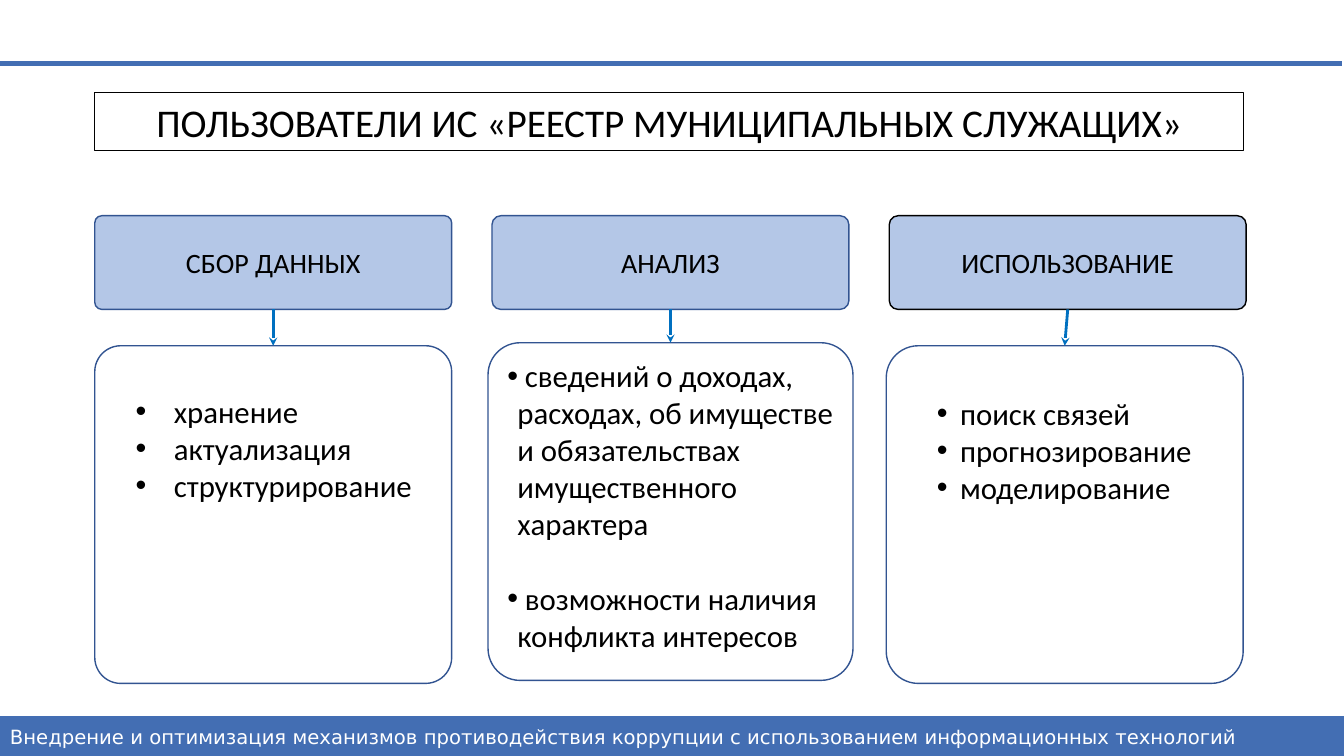
from lxml import etree
from pptx import Presentation
from pptx import util as u
from pptx.dml.color import RGBColor
from pptx.enum import shapes, text
from pptx.oxml import ns

BLUE, OUTLINE, BLACK, WHITE = "436EB3", "325491", "000000", "FFFFFF"


def rgb(value):
    return RGBColor.from_string(value)


def style(shape, fill, line, width, size, color=BLACK, font="Calibri",
          align=text.PP_ALIGN.CENTER, anchor=text.MSO_ANCHOR.MIDDLE):
    """Fill and outline a shape and format all of its paragraphs."""
    shape.fill.solid()
    shape.fill.fore_color.rgb = rgb(fill)
    shape.line.color.rgb = rgb(line)
    shape.line.width = u.Pt(width)
    frame = shape.text_frame
    frame.word_wrap = True
    frame.auto_size = text.MSO_AUTO_SIZE.NONE
    frame.vertical_anchor = anchor
    for paragraph in frame.paragraphs:
        paragraph.alignment = align
        paragraph.font.size = u.Pt(size)
        paragraph.font.name = font
        paragraph.font.color.rgb = rgb(color)


presentation = Presentation()
presentation.slide_width, presentation.slide_height = u.Inches(13.33), u.Inches(7.5)
slide = presentation.slides.add_slide(presentation.slide_layouts[5])

# Title
title = slide.shapes.title
title.left, title.top = u.Inches(0.94), u.Inches(0.92)
title.width, title.height = u.Inches(11.39), u.Inches(0.57)
title.text_frame.text = "ПОЛЬЗОВАТЕЛИ ИС «РЕЕСТР МУНИЦИПАЛЬНЫХ СЛУЖАЩИХ»"
style(title, WHITE, BLACK, 0.75, 28)

# Top rule
rule = slide.shapes.add_connector(shapes.MSO_CONNECTOR.STRAIGHT, 0, u.Inches(0.63),
                                  u.Inches(13.31), u.Inches(0.63))
rule.line.color.rgb = rgb(BLUE)
rule.line.width = u.Pt(3)
connectors = [rule]

# Columns: heading, heading outline, corner, card (left, top, width),
# text inset (left, top), hanging indent, list items
columns = [
    ("СБОР ДАННЫХ", OUTLINE, 0.077, (0.94, 3.43, 3.54), (0.33, 0.39), 0.38,
     ["хранение", "актуализация", "структурирование"]),
    ("АНАЛИЗ", OUTLINE, 0.095, (4.84, 3.4, 3.62), (0.1, 0.05), 0.1,
     [" сведений о доходах, расходах, об имуществе и обязательствах "
      "имущественного характера",
      " возможности наличия конфликта интересов"]),
    ("ИСПОЛЬЗОВАНИЕ", BLACK, 0.095, (8.79, 3.43, 3.54), (0.41, 0.39), 0.23,
     ["поиск связей", "прогнозирование", "моделирование"]),
]
for index, (heading, outline, corner, place, inset, indent, items) in enumerate(columns):
    # Heading
    header = slide.shapes.add_shape(
        shapes.MSO_SHAPE.ROUNDED_RECTANGLE, u.Inches(0.94 + 3.94 * index),
        u.Inches(2.14), u.Inches(3.54), u.Inches(0.93))
    header.text_frame.text = heading
    style(header, "B4C7E7", outline, 1, 20)

    # Card with bulleted list
    left, top, width = place
    card = slide.shapes.add_shape(
        shapes.MSO_SHAPE.ROUNDED_RECTANGLE, u.Inches(left), u.Inches(top),
        u.Inches(width), u.Inches(3.35))
    card.text_frame.text = "\n".join(items)
    card.text_frame.margin_left, card.text_frame.margin_top = map(u.Inches, inset)
    style(card, WHITE, OUTLINE, 1, 22, align=text.PP_ALIGN.LEFT,
          anchor=text.MSO_ANCHOR.TOP)
    for paragraph in card.text_frame.paragraphs:
        properties = paragraph._p.get_or_add_pPr()
        properties.set("marL", str(u.Inches(indent)))
        properties.set("indent", str(-u.Inches(indent)))
        bullet_font = etree.Element(ns.qn("a:buFont"), typeface="Arial")
        bullet = etree.Element(ns.qn("a:buChar"), char="•")
        properties.find(ns.qn("a:defRPr")).addprevious(bullet_font)
        bullet_font.addnext(bullet)
    if heading == "АНАЛИЗ":
        card.text_frame.paragraphs[1].space_before = u.Pt(27)

    for shape in (header, card):
        shape.adjustments[0] = corner
        shape.shadow.inherit = False

    # Arrow from heading to card
    arrow = slide.shapes.add_connector(shapes.MSO_CONNECTOR.STRAIGHT, 0, 0, 0, 0)
    arrow.begin_connect(header, 2)
    arrow.end_connect(card, 0)
    arrow.line.color.rgb = rgb("0070C0")
    arrow.line.width = u.Pt(2)
    etree.SubElement(arrow.line._get_or_add_ln(), ns.qn("a:tailEnd"), type="stealth")
    connectors.append(arrow)

for connector in connectors:
    etree.SubElement(connector._element.spPr, ns.qn("a:effectLst"))

# Footer band
footer = slide.shapes.add_shape(shapes.MSO_SHAPE.RECTANGLE, 0, u.Inches(7.11),
                                presentation.slide_width, u.Inches(0.39))
footer.shadow.inherit = False
footer.text_frame.text = ("Внедрение и оптимизация механизмов противодействия коррупции "
                          "с использованием информационных технологий")
style(footer, BLUE, BLUE, 1, 14, WHITE, "DejaVu Sans", text.PP_ALIGN.LEFT)

presentation.save("out.pptx")
